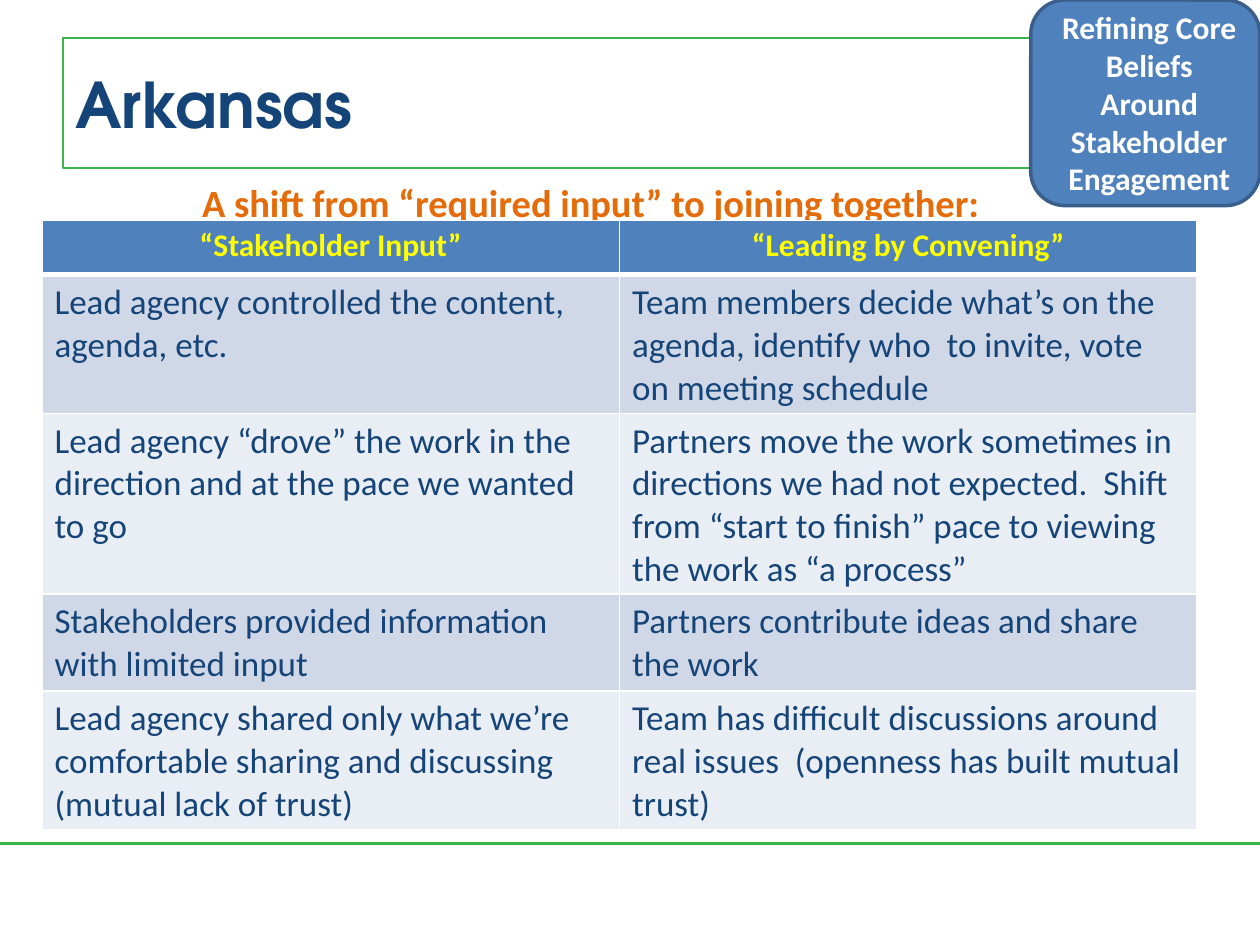
from dataclasses import dataclass

import lxml.etree
import pptx
import pptx.dml.color
import pptx.enum.shapes
import pptx.enum.text
import pptx.oxml.ns
import pptx.util

Pt = pptx.util.Pt
qn = pptx.oxml.ns.qn
ALIGN = pptx.enum.text.PP_ALIGN
ANCHOR = pptx.enum.text.MSO_ANCHOR


@dataclass(frozen=True)
class Theme:
    # Colours
    green: str = "39B54A"
    navy: str = "154578"
    orange: str = "E46C0A"
    blue: str = "4F81BD"
    blue_edge: str = "3A5F8C"
    yellow: str = "FFFF00"
    white: str = "FFFFFF"
    bands: tuple = ("D0D8E8", "E9EDF4")
    # Fonts and type sizes
    title_font: str = "TeX Gyre Adventor"
    body_font: str = "Calibri"
    title_size: int = 36
    lead_size: int = 22
    cell_size: int = 20
    label_size: int = 18


def rgb(color):
    return pptx.dml.color.RGBColor.from_string(color)


class Builder:
    def __init__(self, s, theme):
        self.s = s
        self.theme = theme

    def add_text(self, tf, text, size, color, bold=True, align=ALIGN.LEFT, font=None):
        tf.word_wrap = True
        p = tf.paragraphs[0]
        p.alignment = align
        r = p.add_run()
        r.text = text
        r.font.name = font or self.theme.body_font
        r.font.size = Pt(size)
        r.font.bold = bold
        r.font.color.rgb = rgb(color)

    def box(self, kind, left, top, width, height, line, weight, fill=None):
        sp = self.s.shapes.add_shape(kind, Pt(left), Pt(top), Pt(width), Pt(height))
        sp.shadow.inherit = False
        if fill:
            sp.fill.solid()
            sp.fill.fore_color.rgb = rgb(fill)
        else:
            sp.fill.background()
        sp.line.color.rgb = rgb(line)
        sp.line.width = Pt(weight)
        sp.text_frame.vertical_anchor = ANCHOR.MIDDLE
        return sp.text_frame

    def text_box(self, left, top, width, height):
        return self.s.shapes.add_textbox(Pt(left), Pt(top), Pt(width), Pt(height)).text_frame

    def rule(self, x1, y1, x2, y2, color, weight):
        line = self.s.shapes.add_connector(
            pptx.enum.shapes.MSO_CONNECTOR.STRAIGHT, Pt(x1), Pt(y1), Pt(x2), Pt(y2))
        line.line.color.rgb = rgb(color)
        line.line.width = Pt(weight)
        lxml.etree.SubElement(line._element.spPr, qn("a:effectLst"))

    def borders(self, cell, **weights):
        tc_pr = cell._tc.get_or_add_tcPr()
        for side in "LRTB":
            ln = lxml.etree.SubElement(tc_pr, qn(f"a:ln{side}"), w=str(Pt(weights.get(side, 1))))
            fill = lxml.etree.SubElement(ln, qn("a:solidFill"))
            lxml.etree.SubElement(fill, qn("a:srgbClr"), val=self.theme.white)

    def table(self, left, top, width, heights, rows):
        t = self.theme
        table = self.s.shapes.add_table(
            len(rows), len(rows[0]), Pt(left), Pt(top), Pt(width), Pt(sum(heights))).table
        for i, (height, row) in enumerate(zip(heights, rows)):
            table.rows[i].height = Pt(height)
            for j, text in enumerate(row):
                cell = table.cell(i, j)
                # A thick white line parts the header from the body
                self.borders(cell, T=3 if i == 1 else 1, B=3 if i == 0 else 1)
                cell.fill.solid()
                if i == 0:
                    cell.fill.fore_color.rgb = rgb(t.blue)
                    self.add_text(cell.text_frame, text, t.label_size, t.yellow,
                                  align=ALIGN.CENTER)
                else:
                    cell.fill.fore_color.rgb = rgb(t.bands[(i - 1) % 2])
                    self.add_text(cell.text_frame, text, t.cell_size, t.navy, bold=False)


ROWS = [
    ("“Stakeholder Input”", "“Leading by Convening”"),
    ("Lead agency controlled the content, agenda, etc.",
     "Team members decide what’s on the agenda, identify who  to invite, vote on meeting schedule"),
    ("Lead agency “drove” the work in the direction and at the pace we wanted to go",
     "Partners move the work sometimes in directions we had not expected.  Shift from "
     "“start to finish” pace to viewing the work as “a process”"),
    ("Stakeholders provided information with limited input",
     "Partners contribute ideas and share the work"),
    ("Lead agency shared only what we’re comfortable sharing and discussing "
     "(mutual lack of trust)",
     "Team has difficult discussions around real issues  (openness has built mutual trust)"),
]


def main():
    prs = pptx.Presentation()
    prs.slide_width, prs.slide_height = Pt(720), Pt(540)
    t = Theme()
    b = Builder(prs.slides.add_slide(prs.slide_layouts[6]), t)
    shapes = pptx.enum.shapes.MSO_SHAPE

    # Footer rule
    b.rule(0, 482, 720, 482, t.green, 1.5)

    # Title
    tf = b.box(shapes.RECTANGLE, 36, 21.6, 648, 74.4, t.green, 1)
    b.add_text(tf, "Arkansas", t.title_size, t.navy, font=t.title_font)

    # Lead sentence, set slightly left of centre
    tf = b.text_box(36, 96, 630, 324)
    tf.margin_top, tf.margin_right = Pt(6.5), Pt(34)
    b.add_text(tf, "A shift from “required input” to joining together:",
               t.lead_size, t.orange, align=ALIGN.CENTER)

    # Comparison table
    b.table(24, 126, 660, (31, 79.2, 103.2, 55.2, 79.2), ROWS)

    # Corner label
    tf = b.box(shapes.ROUNDED_RECTANGLE, 589, 0, 131, 117.5, t.blue_edge, 2, t.blue)
    tf.margin_left = Pt(11.5)
    b.add_text(tf, "Refining Core Beliefs Around Stakeholder Engagement",
               t.label_size, t.white, align=ALIGN.CENTER)

    prs.save("out.pptx")


if __name__ == "__main__":
    main()
